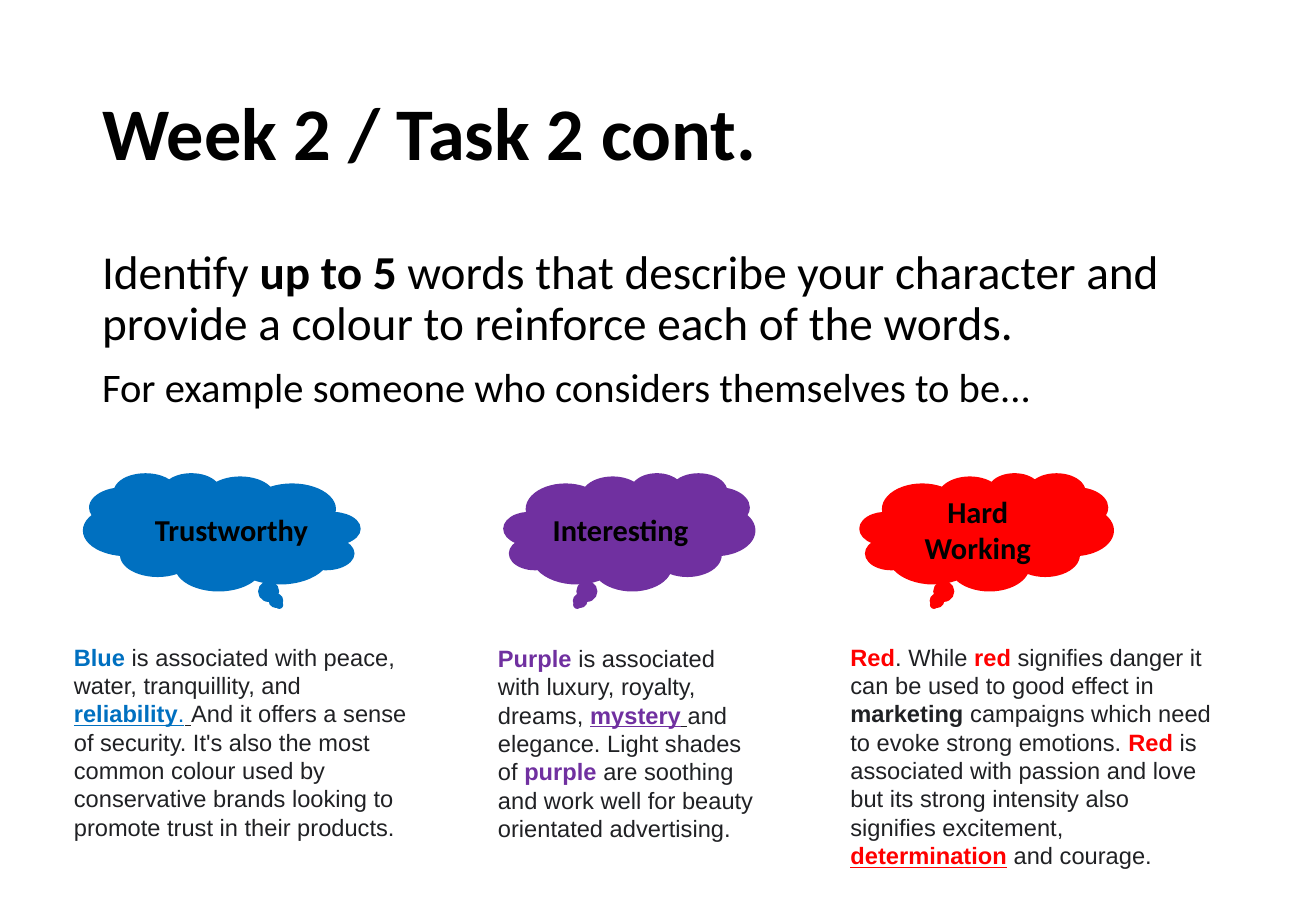
from lxml.etree import SubElement
from pptx import Presentation
from pptx.dml.color import RGBColor
from pptx.enum.shapes import MSO_SHAPE
from pptx.enum.text import MSO_ANCHOR, MSO_AUTO_SIZE, PP_ALIGN
from pptx.oxml.ns import qn
from pptx.util import Inches, Pt

COLOURS = {
    "black": "000000",
    "text": "202124",
    "blue": "0070C0",
    "purple": "7030A0",
    "red": "FF0000",
}

# Run styles: a = accent colour, b = bold, u = underlined
BLUE_RUNS = [
    ("Blue", "ab"),
    (" is associated with peace, water, tranquillity, and ", ""),
    ("reliability", "abu"),
    (".", "au"),
    (" ", "u"),
    ("And it offers a sense of security. It's also the most common colour used by "
     "conservative brands looking to promote trust in their products.", ""),
]
PURPLE_RUNS = [
    ("Purple ", "ab"),
    ("is associated with luxury, royalty, dreams, ", ""),
    ("mystery", "abu"),
    (" ", "bu"),
    ("and elegance. Light shades of ", ""),
    ("purple ", "ab"),
    ("are soothing and work well for beauty orientated advertising.", ""),
]
RED_RUNS = [
    ("Red", "ab"),
    (". While ", ""),
    ("red", "ab"),
    (" signifies danger it can be used to good effect in ", ""),
    ("marketing", "b"),
    (" campaigns which need to evoke strong emotions. ", ""),
    ("Red", "ab"),
    (" is associated with passion and love but its strong intensity also "
     "signifies excitement, ", ""),
    ("determination", "abu"),
    (" and courage.", ""),
]

# Word, colour, cloud left and width, flipped, note box, note runs
TRAITS = [
    ("Trustworthy", "blue", 0.69, 2.27, True, (0.51, 5.24, 2.96, 1.75), BLUE_RUNS),
    ("Interesting", "purple", 4.15, 2.06, False, (4, 5.25, 2.36, 1.75), PURPLE_RUNS),
    ("Hard Working", "red", 7.08, 2.08, False, (6.9, 5.24, 3.19, 1.99), RED_RUNS),
]


def rgb(name):
    return RGBColor.from_string(COLOURS[name])


def add_run(p, text, size, colour="black", bold=False, underline=False, font="Calibri"):
    r = p.add_run()
    r.text = text
    r.font.name = font
    r.font.size = Pt(size)
    r.font.color.rgb = rgb(colour)
    r.font.bold = bold
    r.font.underline = underline


def place(sp, left, top, width, height):
    sp.left, sp.top = Inches(left), Inches(top)
    sp.width, sp.height = Inches(width), Inches(height)


def fill_title(sp):
    place(sp, 0.74, 0.4, 9.34, 1.45)
    tf = sp.text_frame
    tf.auto_size = MSO_AUTO_SIZE.NONE
    tf.vertical_anchor = MSO_ANCHOR.MIDDLE
    p = tf.paragraphs[0]
    p.alignment = PP_ALIGN.LEFT
    p.line_spacing = 0.9
    add_run(p, "Week 2 / Task 2 cont.", 44, bold=True)


def format_body_paragraph(p):
    """Set the spacing and switch off the bullet and its indent."""
    p.line_spacing = 0.9
    p.space_before = Pt(10)
    pPr = p._p.get_or_add_pPr()
    pPr.set("marL", "0")
    pPr.set("indent", "0")
    SubElement(pPr, qn("a:buNone"))


def fill_body(sp):
    place(sp, 0.74, 2, 9.34, 4.76)
    tf = sp.text_frame
    tf.auto_size = MSO_AUTO_SIZE.NONE
    task, example = tf.paragraphs[0], tf.add_paragraph()
    for p in (task, example):
        format_body_paragraph(p)
    add_run(task, "Identify ", 28)
    add_run(task, "up to 5 ", 28, bold=True)
    add_run(task, "words that describe your character and provide a colour "
                  "to reinforce each of the words.", 28)
    add_run(example, "For example someone who considers themselves to be...", 24)


def add_cloud(s, word, colour, left, width, flipped):
    sp = s.shapes.add_shape(MSO_SHAPE.CLOUD_CALLOUT, Inches(left), Inches(3.9),
                            Inches(width), Inches(0.96))
    sp.shadow.inherit = False
    sp.fill.solid()
    sp.fill.fore_color.rgb = rgb(colour)
    sp.line.color.rgb = rgb(colour)
    sp.line.width = Pt(1)
    if flipped:
        sp._element.spPr.find(qn("a:xfrm")).set("flipH", "1")
    tf = sp.text_frame
    tf.word_wrap = True
    tf.vertical_anchor = MSO_ANCHOR.MIDDLE
    p = tf.paragraphs[0]
    p.alignment = PP_ALIGN.CENTER
    add_run(p, word, 18, bold=True)


def add_note(s, box, runs, accent):
    tf = s.shapes.add_textbox(*map(Inches, box)).text_frame
    tf.word_wrap = True
    tf.auto_size = MSO_AUTO_SIZE.SHAPE_TO_FIT_TEXT
    p = tf.paragraphs[0]
    for text, style in runs:
        add_run(p, text, 14, accent if "a" in style else "text",
                "b" in style, "u" in style, "Arial")


def main():
    prs = Presentation()
    prs.slide_width, prs.slide_height = Inches(10.83), Inches(7.5)
    s = prs.slides.add_slide(prs.slide_layouts[1])
    fill_title(s.shapes.title)
    fill_body(s.placeholders[1])
    for word, colour, left, width, flipped, box, runs in TRAITS:
        add_cloud(s, word, colour, left, width, flipped)
        add_note(s, box, runs, colour)
    prs.save("out.pptx")


if __name__ == "__main__":
    main()
